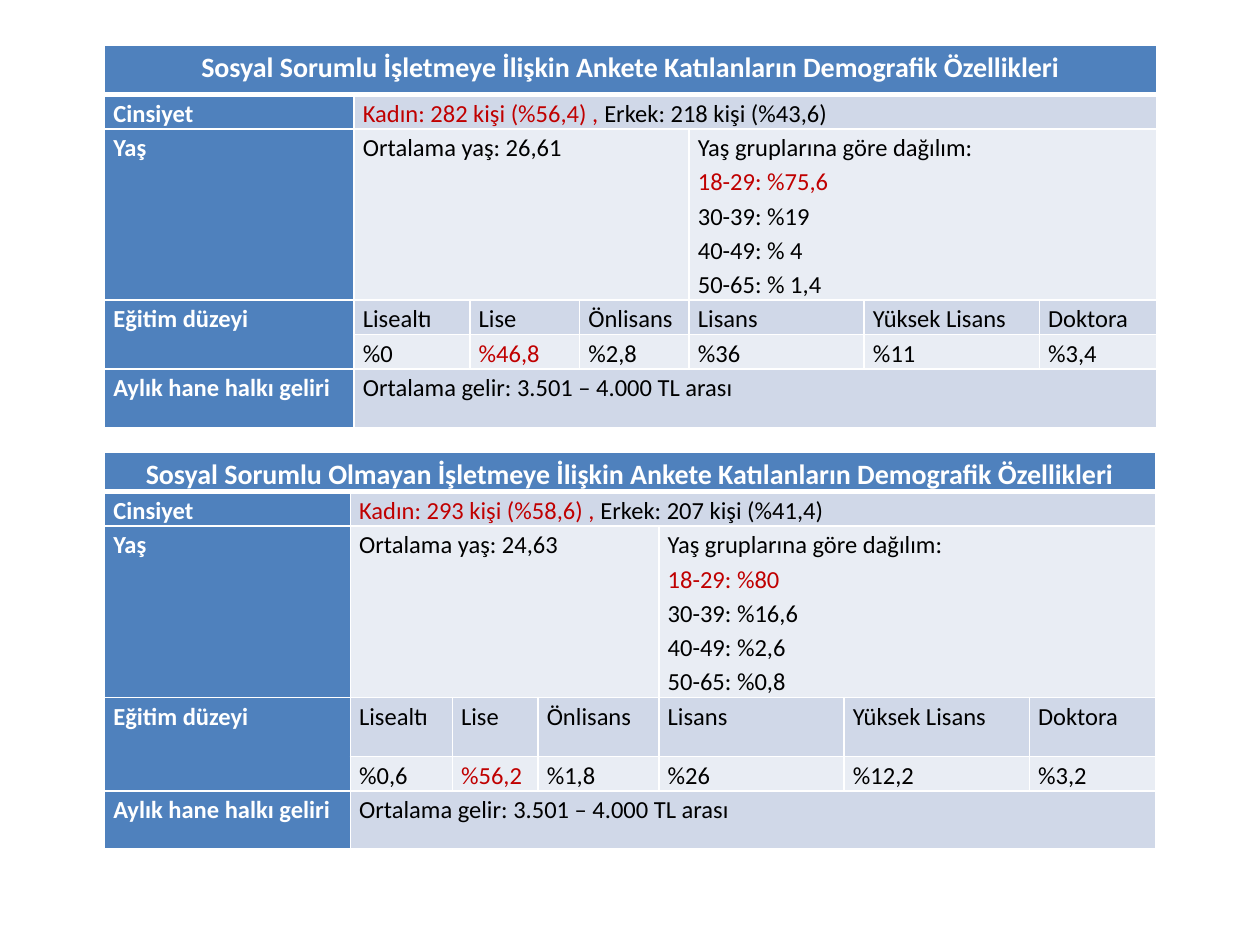
"""Builds a slide with two tables of survey participants' demographics."""
from lxml.etree import SubElement
from pptx import Presentation
from pptx.dml.color import RGBColor as RGB
from pptx.enum.text import PP_ALIGN as ALIGN
from pptx.oxml.ns import qn
from pptx.util import Inches, Pt

COLORS = {"head": "4F81BD", "band": "D0D8E8", "light": "E9EDF4",
          "white": "FFFFFF", "black": "000000", "red": "C00000"}
LEVELS = ["Lisealtı", "Lise", "Önlisans", "Lisans", "Yüksek Lisans", "Doktora"]
AGES = ["18-29", "30-39", "40-49", "50-65"]
LEFT, WIDTH = 0.83, 8.35
TOP_RED = 1

SURVEYS = [
    {"title": "Sosyal Sorumlu İşletmeye İlişkin Ankete Katılanların Demografik Özellikleri",
     "top": 0.36,
     "cols": [1.98, 0.92, 0.87, 0.87, 1.39, 1.39, 0.93],
     "rows": [0.39, 0.24, 1.18, 0.27, 0.26, 0.47],
     "women": "282 kişi (%56,4)", "men": "218 kişi (%43,6)", "mean_age": "26,61",
     "ages": ["%75,6", "%19", "% 4", "% 1,4"],
     "levels": ["%0", "%46,8", "%2,8", "%36", "%11", "%3,4"]},
    {"title": "Sosyal Sorumlu Olmayan İşletmeye İlişkin Ankete Katılanların Demografik Özellikleri",
     "top": 3.59,
     "cols": [1.95, 0.81, 0.68, 0.96, 1.47, 1.47, 1],
     "rows": [0.29, 0.24, 1.18, 0.47, 0.27, 0.46],
     "women": "293 kişi (%58,6)", "men": "207 kişi (%41,4)", "mean_age": "24,63",
     "ages": ["%80", "%16,6", "%2,6", "%0,8"],
     "levels": ["%0,6", "%56,2", "%1,8", "%26", "%12,2", "%3,2"]},
]


def set_borders(cell, **widths):
    """Draw white borders, 1 pt wide unless a side is given its own width."""
    tc_pr = cell._tc.get_or_add_tcPr()
    for i, side in enumerate(("lnL", "lnR", "lnT", "lnB")):
        ln = SubElement(tc_pr, qn(f"a:{side}"), w=str(Pt(widths.get(side, 1))))
        fill = SubElement(ln, qn("a:solidFill"))
        SubElement(fill, qn("a:srgbClr"), val=COLORS["white"])
        tc_pr.insert(i, ln)


def style_cell(cell, fill, **widths):
    """Set the fill, margins and borders of a cell."""
    cell.fill.solid()
    cell.fill.fore_color.rgb = RGB.from_string(COLORS[fill])
    cell.margin_left = cell.margin_right = Inches(0.07)
    cell.margin_top = cell.margin_bottom = 0
    set_borders(cell, **widths)


def write(cell, *lines, size=14, bold=False, align=ALIGN.JUSTIFY):
    """Write one paragraph per line, each line a list of (text, colour) runs."""
    tf = cell.text_frame
    for i, runs in enumerate(lines):
        p = tf.add_paragraph() if i else tf.paragraphs[0]
        p.alignment, p.line_spacing = align, 1.15
        p.font.size, p.font.bold, p.font.name = Pt(size), bold, "Calibri"
        for text, color in runs:
            r = p.add_run()
            r.text = text
            r.font.color.rgb = RGB.from_string(COLORS[color])


def add_grid(slide, survey):
    """Add the styled and merged empty table of a survey."""
    cols, rows = survey["cols"], survey["rows"]
    table = slide.shapes.add_table(
        len(rows), len(cols), Inches(LEFT), Inches(survey["top"]),
        Inches(WIDTH), Inches(sum(rows))).table
    for column, width in zip(table.columns, cols):
        column.width = Inches(width)
    for row, height in zip(table.rows, rows):
        row.height = Inches(height)
    for r in range(len(rows)):
        widths = {0: {"lnB": 3}, 1: {"lnT": 3}}.get(r, {})
        for c in range(len(cols)):
            body = "light" if r in (2, 4) else "band"
            style_cell(table.cell(r, c), "head" if r == 0 or c == 0 else body, **widths)
    for start, end in [((0, 0), (0, 6)), ((1, 1), (1, 6)), ((2, 1), (2, 3)),
                       ((2, 4), (2, 6)), ((3, 0), (4, 0)), ((5, 1), (5, 6))]:
        table.cell(*start).merge(table.cell(*end))
    return table


def add_survey(slide, survey):
    """Add the demographics table of one survey."""
    table = add_grid(slide, survey)
    cell = table.cell
    write(cell(0, 0), [(survey["title"], "white")], size=16, bold=True, align=ALIGN.CENTER)
    for row, label in [(1, "Cinsiyet"), (2, "Yaş"), (3, "Eğitim düzeyi"),
                       (5, "Aylık hane halkı geliri")]:
        write(cell(row, 0), [(label, "white")], bold=True)
    write(cell(1, 1), [(f"Kadın: {survey['women']} , ", "red"),
                       (f"Erkek: {survey['men']}", "black")])
    write(cell(2, 1), [(f"Ortalama yaş: {survey['mean_age']}", "black")])
    ages = [[(f"{age}: {share}", "black" if i else "red")]
            for i, (age, share) in enumerate(zip(AGES, survey["ages"]))]
    write(cell(2, 4), [("Yaş gruplarına göre dağılım:", "black")], *ages)
    for i, (level, share) in enumerate(zip(LEVELS, survey["levels"])):
        write(cell(3, i + 1), [(level, "black")])
        write(cell(4, i + 1), [(share, "red" if i == TOP_RED else "black")])
    write(cell(5, 1), [("Ortalama gelir: 3.501 – 4.000 TL arası", "black")])


def main():
    """Build and save the slide."""
    prs = Presentation()
    prs.slide_width, prs.slide_height = Inches(10), Inches(7.5)
    slide = prs.slides.add_slide(prs.slide_layouts[6])
    for survey in SURVEYS:
        add_survey(slide, survey)
    prs.save("out.pptx")


if __name__ == "__main__":
    main()
